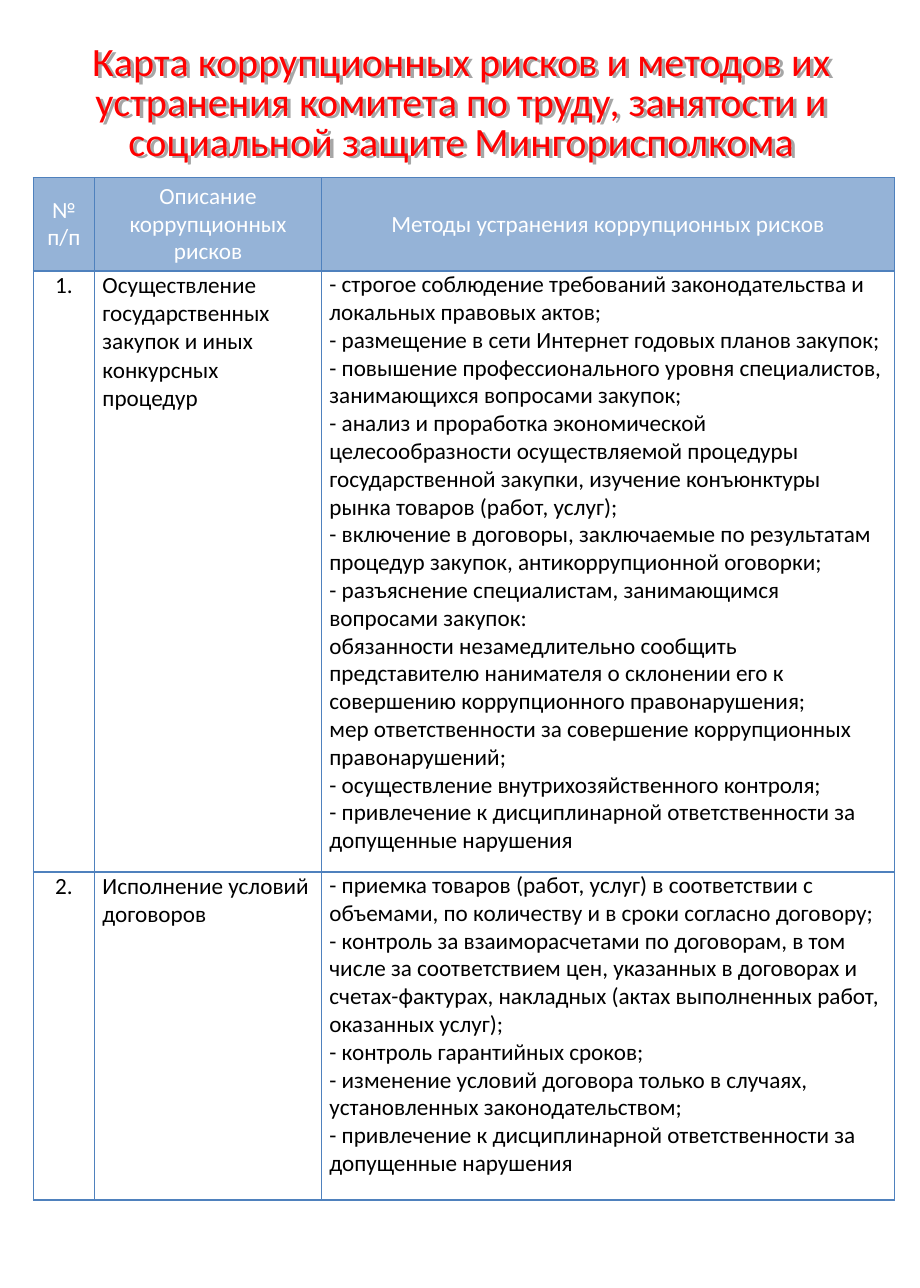
from dataclasses import dataclass

from lxml import etree
from pptx import Presentation
from pptx import util as u
from pptx.dml.color import RGBColor
from pptx.enum import text as t
from pptx.oxml.ns import qn


@dataclass(frozen=True)
class Theme:
    """Colours, font and type sizes of the slide."""
    font: str = "Calibri"
    heading: str = "FF0000"
    heading_shade: str = "A6A6A6"
    header_text: str = "FFFFFF"
    header_fill: str = "95B3D7"
    body: str = "000000"
    border: str = "4F81BD"
    border_width: float = 1
    heading_size: int = 26
    heading_leading: int = 26
    table_size: int = 15
    table_leading: int = 18


HEADING = ("Карта коррупционных рисков и методов их устранения комитета "
           "по труду, занятости и социальной защите Мингорисполкома")
COLUMN_NAMES = ("№ п/п", "Описание коррупционных рисков",
                "Методы устранения коррупционных рисков")
PENALTY = "- привлечение к дисциплинарной ответственности за допущенные нарушения"
RISKS = [
    ("Осуществление государственных закупок и иных конкурсных процедур", [
        "- строгое соблюдение требований законодательства и локальных правовых актов;",
        "- размещение в сети Интернет годовых планов закупок;",
        "- повышение профессионального уровня специалистов, занимающихся вопросами закупок;",
        "- анализ и проработка экономической целесообразности осуществляемой процедуры "
        "государственной закупки, изучение конъюнктуры рынка товаров (работ, услуг);",
        "- включение в договоры, заключаемые по результатам процедур закупок, "
        "антикоррупционной оговорки;",
        "- разъяснение специалистам, занимающимся вопросами закупок:",
        "обязанности незамедлительно сообщить представителю нанимателя о склонении его "
        "к совершению коррупционного правонарушения;",
        "мер ответственности за совершение коррупционных правонарушений;",
        "- осуществление внутрихозяйственного контроля;",
        PENALTY,
    ]),
    ("Исполнение условий договоров", [
        "- приемка товаров (работ, услуг) в соответствии с объемами, по количеству "
        "и в сроки согласно договору;",
        "- контроль за взаиморасчетами по договорам, в том числе за соответствием цен, "
        "указанных в договорах и счетах-фактурах, накладных (актах выполненных работ, "
        "оказанных услуг);",
        "- контроль гарантийных сроков;",
        "- изменение условий договора только в случаях, установленных законодательством;",
        PENALTY,
    ]),
]
COLUMN_WIDTHS = (1.4, 5.18, 13.08)
ROW_HEIGHTS = (2.13, 13.72, 7.49)
HEADER_INSETS = (0, 0.08, 0.08)
BODY_INSETS = (0.1, 0.18, 0.18)


def write(frame, lines, *, font, size, color, align=t.PP_ALIGN.LEFT, leading=None):
    """Fill a text frame with one paragraph per line."""
    for index, line in enumerate(lines):
        paragraph = frame.add_paragraph() if index else frame.paragraphs[0]
        paragraph.alignment = align
        paragraph.space_before = paragraph.space_after = u.Pt(0)
        paragraph.line_spacing = u.Pt(leading) if leading else 1.0
        run = paragraph.add_run()
        run.text = line
        run.font.name = font
        run.font.size = u.Pt(size)
        run.font.bold = False
        run.font.color.rgb = RGBColor.from_string(color)


class RiskMap:
    """Builder that holds the theme and the current slide."""

    def __init__(self, slide, theme):
        """Keep the slide and its theme."""
        self.slide = slide
        self.theme = theme

    def heading_text(self, box, left, top, color):
        """Place and format one layer of the heading."""
        box.left, box.top, box.width, box.height = map(u.Cm, (left, top, 18.9, 3.35))
        frame = box.text_frame
        frame.word_wrap = True
        frame.auto_size = t.MSO_AUTO_SIZE.NONE
        frame.vertical_anchor = t.MSO_ANCHOR.MIDDLE
        frame.margin_left = frame.margin_right = u.Cm(0.28)
        frame.margin_top = frame.margin_bottom = u.Cm(0.13)
        write(frame, [HEADING], font=self.theme.font, size=self.theme.heading_size,
              color=color, align=t.PP_ALIGN.CENTER, leading=self.theme.heading_leading)

    def heading(self, left, top):
        """Add the heading over its offset shade."""
        title = self.slide.shapes.title
        shade = self.slide.shapes.add_textbox(0, 0, 0, 0)
        title.element.addprevious(shade.element)
        self.heading_text(shade, left + 0.08, top + 0.05, self.theme.heading_shade)
        self.heading_text(title, left, top, self.theme.heading)

    def borders(self, cell):
        """Draw the four borders of a cell."""
        properties = cell._tc.get_or_add_tcPr()
        for side in ("lnL", "lnR", "lnT", "lnB"):
            line = etree.SubElement(properties, qn(f"a:{side}"),
                                    w=str(u.Pt(self.theme.border_width)))
            fill = etree.SubElement(line, qn("a:solidFill"))
            etree.SubElement(fill, qn("a:srgbClr"), val=self.theme.border)

    def cell(self, cell, lines, inset, *, header=False, align=t.PP_ALIGN.LEFT, leading=None):
        """Format and fill one table cell."""
        theme = self.theme
        cell.margin_left = cell.margin_right = u.Cm(inset)
        cell.margin_top = cell.margin_bottom = 0
        cell.vertical_anchor = t.MSO_ANCHOR.MIDDLE if header else t.MSO_ANCHOR.TOP
        self.borders(cell)
        if header:
            cell.fill.solid()
            cell.fill.fore_color.rgb = RGBColor.from_string(theme.header_fill)
        else:
            cell.fill.background()
        write(cell.text_frame, lines, font=theme.font, size=theme.table_size,
              color=theme.header_text if header else theme.body,
              align=align, leading=leading)

    def risk_table(self, left, top):
        """Add the table of risks and methods."""
        table = self.slide.shapes.add_table(
            len(ROW_HEIGHTS), len(COLUMN_WIDTHS), u.Cm(left), u.Cm(top),
            u.Cm(sum(COLUMN_WIDTHS)), u.Cm(sum(ROW_HEIGHTS))).table
        table.first_row = table.horz_banding = False
        for column, width in zip(table.columns, COLUMN_WIDTHS):
            column.width = u.Cm(width)
        for row, height in zip(table.rows, ROW_HEIGHTS):
            row.height = u.Cm(height)

        center, left_align = t.PP_ALIGN.CENTER, t.PP_ALIGN.LEFT
        leading = self.theme.table_leading
        for column, (name, inset) in enumerate(zip(COLUMN_NAMES, HEADER_INSETS)):
            self.cell(table.cell(0, column), [name], inset,
                      header=True, align=center, leading=leading)
        body_formats = ((center, None), (left_align, None), (left_align, leading))
        for number, (risk, methods) in enumerate(RISKS, 1):
            contents = ([f"{number}."], [risk], methods)
            for column, (align, spacing) in enumerate(body_formats):
                self.cell(table.cell(number, column), contents[column],
                          BODY_INSETS[column], align=align, leading=spacing)


def main():
    """Build and save the slide."""
    deck = Presentation()
    deck.slide_width, deck.slide_height = u.Cm(21), u.Cm(29.41)
    title_only = deck.slide_layouts[5]
    risk_map = RiskMap(deck.slides.add_slide(title_only), Theme())
    risk_map.heading(1.09, 0.71)
    risk_map.risk_table(0.76, 4.06)
    deck.save("out.pptx")


if __name__ == "__main__":
    main()
